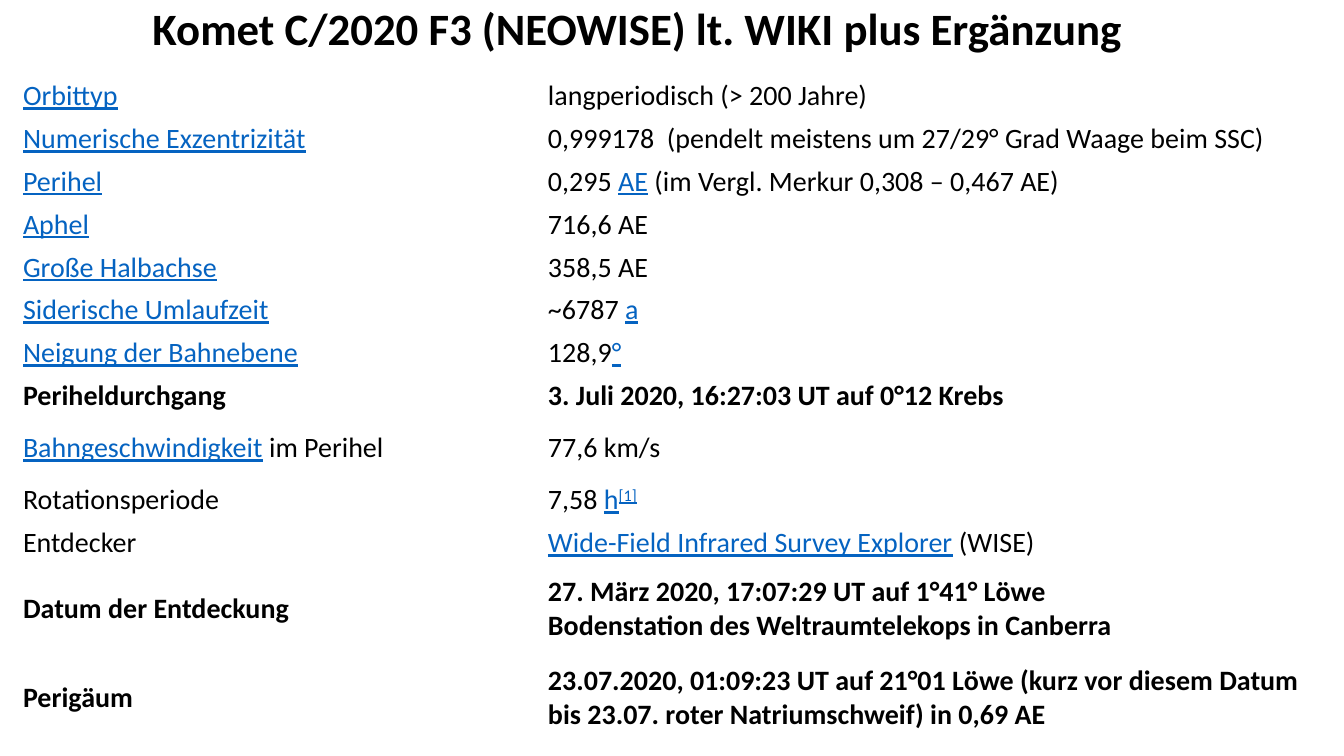
"""Build a slide with the orbital data of comet C/2020 F3."""
from dataclasses import dataclass

from pptx import Presentation
from pptx.dml.color import RGBColor
from pptx.enum import text
from pptx.util import Cm, Pt

TITLE = "Komet C/2020 F3 (NEOWISE) lt. WIKI plus Ergänzung"
LINK_MARK, RAISED_MARK = "|", "^"
NORMAL, TALL, DOUBLE = 1.08, 1.55, 2.24

ORBIT_DATA = [
    ("|Orbittyp|", "langperiodisch (> 200 Jahre)"),
    ("|Numerische Exzentrizität|", "0,999178  (pendelt meistens um 27/29° Grad Waage beim SSC)"),
    ("|Perihel|", "0,295 |AE| (im Vergl. Merkur 0,308 – 0,467 AE)"),
    ("|Aphel|", "716,6 AE"),
    ("|Große Halbachse|", "358,5 AE"),
    ("|Siderische Umlaufzeit|", "~6787 |a|"),
    ("|Neigung der Bahnebene|", "128,9|°|"),
    ("Periheldurchgang", "3. Juli 2020, 16:27:03 UT auf 0°12 Krebs"),
    ("|Bahngeschwindigkeit| im Perihel", "77,6 km/s"),
    ("Rotationsperiode", "7,58 |h||^[1]|"),
    ("Entdecker", "|Wide-Field Infrared Survey Explorer| (WISE)"),
    ("Datum der Entdeckung",
     "27. März 2020, 17:07:29 UT auf 1°41° Löwe\nBodenstation des Weltraumtelekops in Canberra"),
    ("Perigäum",
     "23.07.2020, 01:09:23 UT auf 21°01 Löwe (kurz vor diesem Datum "
     "bis 23.07. roter Natriumschweif) in 0,69 AE"),
]
KEY_EVENTS = {"Periheldurchgang", "Datum der Entdeckung", "Perigäum"}
ROW_HEIGHTS = {
    "|Bahngeschwindigkeit| im Perihel": TALL,
    "Datum der Entdeckung": DOUBLE,
    "Perigäum": DOUBLE,
}
COLUMN_WIDTHS = (13.23, 20.26)


@dataclass(frozen=True)
class Theme:
    """Colours, font and type sizes of the slide."""
    font: str = "Calibri"
    ink: str = "000000"
    link: str = "0563C1"
    title_size: int = 32
    body_size: int = 20


THEME = Theme()


def write(frame, content, size=THEME.body_size, bold=False, align=None, spacing=None):
    """Fill a text frame, formatting the marked links and raised marks."""
    frame.clear()
    for index, line in enumerate(content.split("\n")):
        para = frame.add_paragraph() if index else frame.paragraphs[0]
        para.alignment = align
        para.line_spacing = spacing
        for position, part in enumerate(line.split(LINK_MARK)):
            if not part:
                continue
            is_link = position % 2 == 1
            span = para.add_run()
            span.text = part.removeprefix(RAISED_MARK)
            span.font.name = THEME.font
            span.font.size = Pt(size)
            span.font.bold = bold
            span.font.underline = is_link
            span.font.color.rgb = RGBColor.from_string(THEME.link if is_link else THEME.ink)
            if part.startswith(RAISED_MARK):
                span._r.get_or_add_rPr().set("baseline", "30000")


def add_title(page):
    """Place the centred heading."""
    title = page.shapes.title
    title.left, title.top, title.width, title.height = Cm(1.98), Cm(-0.28), Cm(28.17), Cm(2.13)
    frame = title.text_frame
    frame.auto_size = text.MSO_AUTO_SIZE.NONE
    frame.vertical_anchor = text.MSO_ANCHOR.MIDDLE
    write(frame, TITLE, size=THEME.title_size, bold=True,
          align=text.PP_ALIGN.CENTER, spacing=0.9)


def add_orbit_table(page):
    """Place the table of orbital data."""
    heights = [ROW_HEIGHTS.get(label, NORMAL) for label, _ in ORBIT_DATA]
    table = page.shapes.add_table(
        len(ORBIT_DATA), len(COLUMN_WIDTHS), Cm(0.38), Cm(1.88),
        Cm(sum(COLUMN_WIDTHS)), Cm(sum(heights))).table
    table.first_row = table.horz_banding = False
    for column, width in zip(table.columns, COLUMN_WIDTHS):
        column.width = Cm(width)
    for row, height, entry in zip(table.rows, heights, ORBIT_DATA):
        row.height = Cm(height)
        for cell, content in zip(row.cells, entry):
            cell.fill.background()
            cell.vertical_anchor = text.MSO_ANCHOR.MIDDLE
            cell.margin_left = cell.margin_right = Cm(0.2)
            cell.margin_top = cell.margin_bottom = Cm(0.1)
            write(cell.text_frame, content, bold=entry[0] in KEY_EVENTS)


def main():
    """Build and save the deck."""
    deck = Presentation()
    deck.slide_width, deck.slide_height = Cm(33.87), Cm(19.05)
    page = deck.slides.add_slide(deck.slide_layouts[5])
    add_title(page)
    add_orbit_table(page)
    deck.save("out.pptx")


if __name__ == "__main__":
    main()
